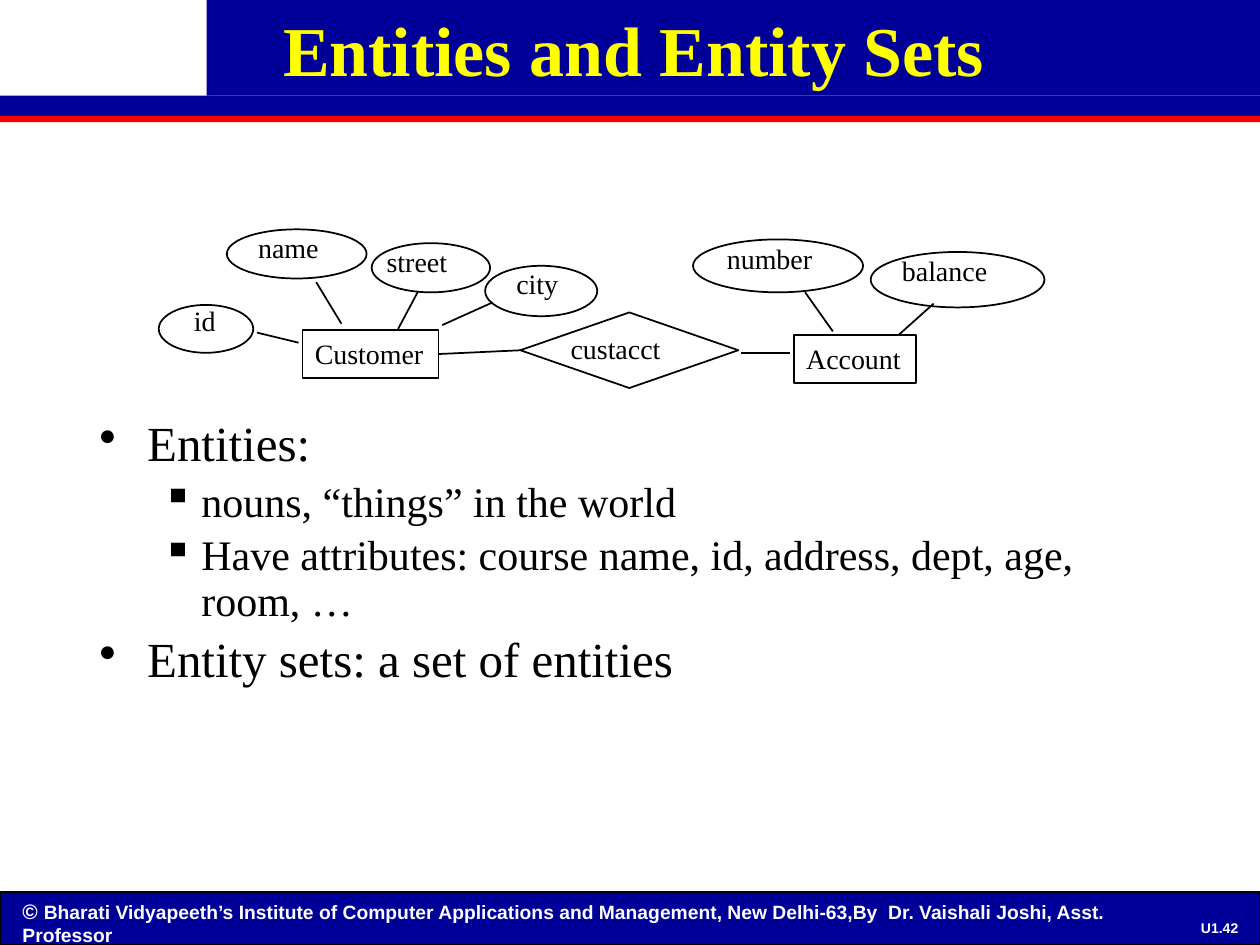
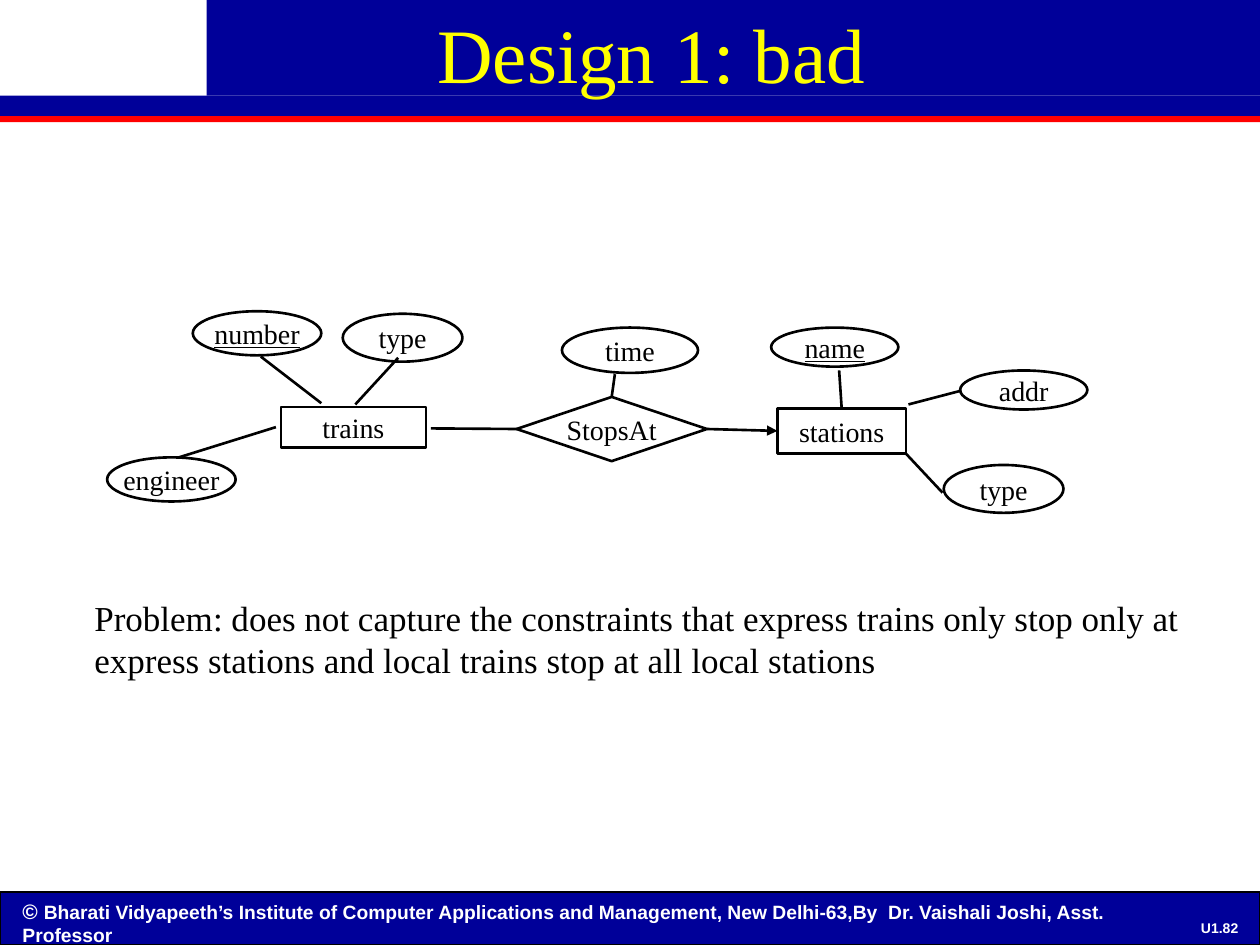
import pptx
import pptx.util
import pptx.dml.color
import pptx.enum.shapes
import pptx.enum.text
import pptx.oxml.ns
import lxml.etree

Inches, Pt = pptx.util.Inches, pptx.util.Pt
RGBColor = pptx.dml.color.RGBColor
SHAPE = pptx.enum.shapes.MSO_SHAPE
ALIGN = pptx.enum.text.PP_ALIGN
ANCHOR = pptx.enum.text.MSO_ANCHOR
qn = pptx.oxml.ns.qn

NAVY = RGBColor(0x00, 0x00, 0x99)
RED = RGBColor(0xFF, 0x00, 0x00)
YELLOW = RGBColor(0xFF, 0xFF, 0x00)
WHITE = RGBColor(0xFF, 0xFF, 0xFF)
BLACK = RGBColor(0x00, 0x00, 0x00)
SERIF, SANS = "Times New Roman", "Arial"
FOOTER = ("Bharati Vidyapeeth’s Institute of Computer Applications and Management, "
          "New Delhi-63,By  Dr. Vaishali Joshi, Asst. Professor")


class Deck:
    def __init__(self):
        self.prs = pptx.Presentation()
        self.prs.slide_width, self.prs.slide_height = Inches(10), Inches(7.5)
        self.slide = None
        self.line_width = 1

    def new_slide(self, title, title_left, title_size, bold, number, line_width):
        """Start a slide with its bands, title and footer."""
        self.slide = self.prs.slides.add_slide(self.prs.slide_layouts[6])
        self.line_width = line_width
        self.band((0, 0.92, 10, 0.05), RED)
        self.band((1.64, 0, 8.36, 0.76), NAVY)
        self.band((0, 0.76, 10, 0.16), NAVY)
        footer = self.band((0, 7.08, 10, 0.42), NAVY)
        footer.line.color.rgb, footer.line.width = BLACK, Pt(0.75)
        p = self.text((0.08, 7.08, 9.48, 0.42))
        self.run(p, "© ", 12, WHITE, SANS, bold=True)
        self.run(p, FOOTER, 11, WHITE, SANS, bold=True)
        p = self.text((9.42, 7.27, 0.52, 0.19), ALIGN.CENTER, ANCHOR.MIDDLE, wrap=False)
        self.run(p, number, 8, WHITE, SANS, bold=True)
        p = self.text((title_left, 0, 9, 1.25), ALIGN.CENTER)
        self.run(p, title, title_size, YELLOW, bold=bold)

    def run(self, p, text, size, color=BLACK, font=SERIF, bold=False, underline=False):
        r = p.add_run()
        r.text = text
        r.font.size, r.font.name, r.font.color.rgb = Pt(size), font, color
        r.font.bold, r.font.underline = bold, underline

    def frame(self, sp, align, anchor, wrap):
        """Set up the text frame of a shape and return its first paragraph."""
        tf = sp.text_frame
        tf.word_wrap, tf.vertical_anchor = wrap, anchor
        p = tf.paragraphs[0]
        p.alignment = align
        return p

    def text(self, box, align=ALIGN.LEFT, anchor=ANCHOR.TOP, wrap=True):
        sp = self.slide.shapes.add_textbox(*map(Inches, box))
        return self.frame(sp, align, anchor, wrap)

    def label(self, box, text):
        self.run(self.text(box, wrap=False), text, 16)

    def shape(self, kind, box):
        sp = self.slide.shapes.add_shape(kind, *map(Inches, box))
        sp.shadow.inherit = False
        return sp

    def band(self, box, color):
        sp = self.shape(SHAPE.RECTANGLE, box)
        sp.fill.solid()
        sp.fill.fore_color.rgb = color
        sp.line.fill.background()
        return sp

    def node(self, kind, box, text="", align=ALIGN.CENTER, anchor=ANCHOR.MIDDLE,
             underline=False):
        """Add an outlined diagram shape, with text if there is any."""
        sp = self.shape(kind, box)
        sp.fill.background()
        sp.line.color.rgb, sp.line.width = BLACK, Pt(self.line_width)
        if text:
            p = self.frame(sp, align, anchor, wrap=False)
            self.run(p, text, 16, underline=underline)
        return sp

    def line(self, ends, begin=None, end=None, arrow=False):
        """Draw a connector; begin and end are (shape, site) pairs."""
        c = self.slide.shapes.add_connector(
            pptx.enum.shapes.MSO_CONNECTOR.STRAIGHT, *map(Inches, ends))
        c.line.color.rgb, c.line.width = BLACK, Pt(self.line_width)
        if begin:
            c.begin_connect(*begin)
        if end:
            c.end_connect(*end)
        if arrow:
            lxml.etree.SubElement(c.line._get_or_add_ln(), qn("a:tailEnd"), type="triangle")
        lxml.etree.SubElement(c._element.spPr, qn("a:effectLst"))

    def bullets(self, box, items):
        """Add (level, text) items as a bulleted list."""
        styles = [("•", 0.38, -0.38, 28), ("▪", 0.81, -0.31, 24)]
        p = self.text(box)
        tf = p._parent
        for i, (level, text) in enumerate(items):
            char, margin, indent, size = styles[level]
            if i:
                p = tf.add_paragraph()
                p.space_before = Pt(size * 0.2)
            p.level, p.line_spacing = level, 0.9
            pPr = p._p.get_or_add_pPr()
            pPr.set("marL", str(Inches(margin)))
            pPr.set("indent", str(Inches(indent)))
            lxml.etree.SubElement(pPr, qn("a:buChar"), char=char)
            self.run(p, text, size)


def entity_sets_slide(deck):
    deck.new_slide("Entities and Entity Sets", 0.53, 40, True, "U1.42", 1)
    attributes = [
        ("name", (1.8, 1.82, 1.11, 0.39), (1.95, 1.78, 0.68, 0.37)),
        ("street", (2.95, 1.93, 0.94, 0.39), (2.97, 1.89, 0.69, 0.37)),
        ("number", (5.5, 1.9, 1.35, 0.42), (5.67, 1.87, 0.88, 0.37)),
        ("id", (1.26, 2.42, 0.75, 0.38), (1.44, 2.36, 0.38, 0.37)),
        ("balance", (6.91, 2, 1.38, 0.44), (7.06, 1.96, 0.88, 0.37)),
        ("city", (3.85, 2.11, 0.89, 0.4), (4, 2.07, 0.54, 0.37)),
    ]
    for text, oval, label in attributes:
        deck.node(SHAPE.OVAL, oval)
        deck.label(label, text)
    customer, account = [
        deck.node(SHAPE.RECTANGLE, box, text, ALIGN.LEFT, ANCHOR.TOP)
        for text, box in [("Customer", (2.4, 2.62, 1.08, 0.38)),
                          ("Account", (6.3, 2.66, 0.97, 0.38))]]
    custacct = deck.node(SHAPE.DIAMOND, (4.13, 2.48, 1.73, 0.6))
    deck.label((4.43, 2.58, 0.92, 0.37), "custacct")
    for ends in [(2.37, 2.72, 2.04, 2.64), (2.71, 2.57, 2.51, 2.24),
                 (3.16, 2.61, 3.32, 2.31), (3.51, 2.58, 3.91, 2.4),
                 (6.61, 2.63, 6.39, 2.32), (7.13, 2.66, 7.41, 2.41)]:
        deck.line(ends)
    deck.line((4.13, 2.78, 3.48, 2.81), (custacct, 1), (customer, 3))
    deck.line((6.27, 2.8, 5.88, 2.8))
    deck.bullets((0.69, 3.28, 8.63, 3.64), [
        (0, "Entities:"),
        (1, "nouns, “things” in the world"),
        (1, "Have attributes: course name, id, address, dept, age, room, …"),
        (0, "Entity sets: a set of entities"),
    ])


def bad_design_slide(deck):
    deck.new_slide("Design 1: bad", 0.67, 44, False, "U1.82", 1.5)
    p = deck.text((0.65, 4.68, 8.88, 0.77), anchor=ANCHOR.MIDDLE)
    deck.run(p, "Problem: does not capture the constraints that express trains only stop "
                "only at express stations and local trains stop at all local stations", 20)
    deck.node(SHAPE.RECTANGLE, (2.23, 3.23, 1.15, 0.32), "trains")
    stations = deck.node(SHAPE.RECTANGLE, (6.17, 3.24, 1.02, 0.36), "stations")
    stops_at = deck.node(SHAPE.DIAMOND, (4.1, 3.15, 1.51, 0.51), "StopsAt")
    for text, box, is_key in [
            ("type", (2.72, 2.49, 0.95, 0.38), False),
            ("number", (1.53, 2.47, 1.02, 0.35), True),
            ("time", (4.46, 2.6, 1.08, 0.36), False),
            ("name", (6.12, 2.6, 1.01, 0.31), True),
            ("engineer", (0.85, 3.63, 1.02, 0.35), False),
            ("addr", (7.62, 2.94, 1.01, 0.31), False),
            ("type", (7.49, 3.69, 0.95, 0.38), False)]:
        deck.node(SHAPE.OVAL, box, text, underline=is_key)
    for ends in [(2.07, 2.83, 2.55, 3.2), (3.16, 2.84, 2.82, 3.21),
                 (1.42, 3.63, 2.19, 3.39), (7.63, 3.1, 7.21, 3.21),
                 (7.48, 3.91, 7.19, 3.6)]:
        deck.line(ends)
    deck.line((3.42, 3.4, 4.1, 3.4), end=(stops_at, 1))
    deck.line((5.61, 3.4, 6.17, 3.42), (stops_at, 3), (stations, 1), arrow=True)
    deck.line((4.88, 2.97, 4.86, 3.15), end=(stops_at, 0))
    deck.line((6.66, 2.94, 6.68, 3.24), end=(stations, 0))


def main():
    deck = Deck()
    entity_sets_slide(deck)
    bad_design_slide(deck)
    deck.prs.save("out.pptx")


if __name__ == "__main__":
    main()
